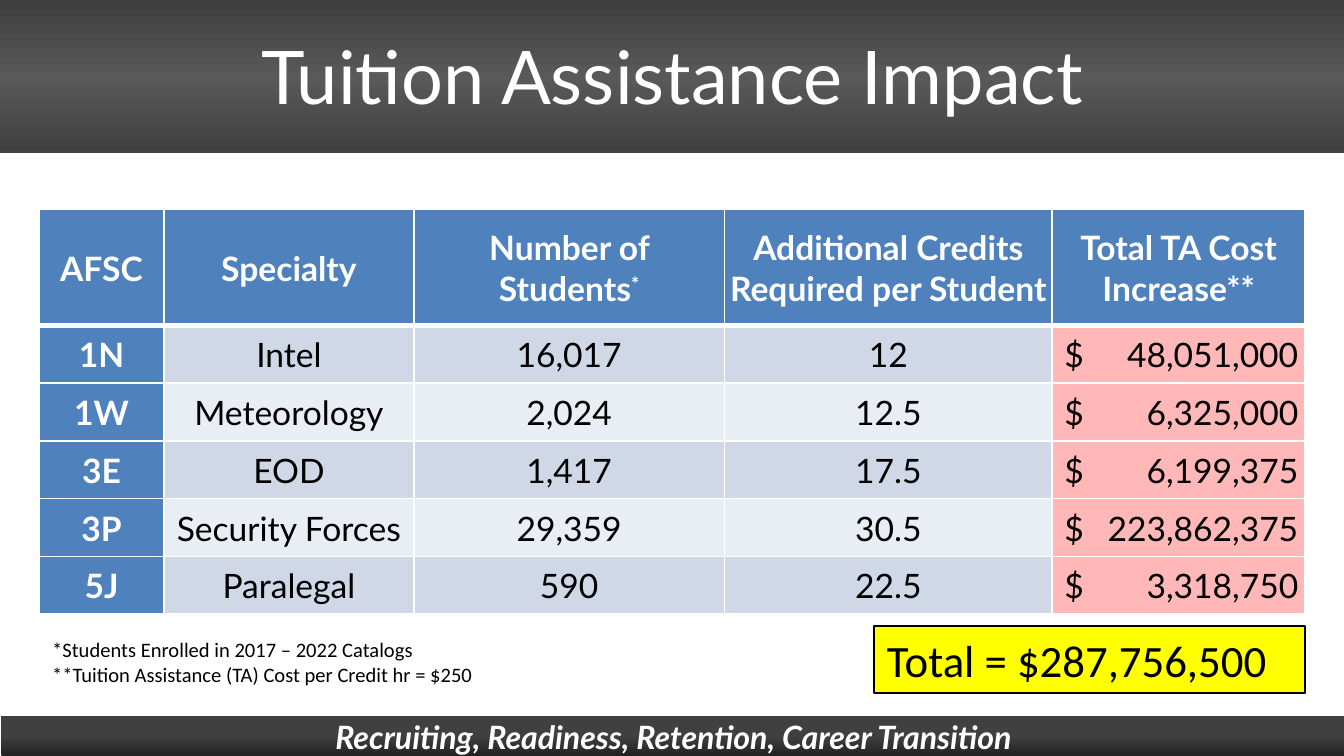
import pptx
import pptx.util
import pptx.dml.color
import pptx.enum.shapes
import pptx.enum.text
import pptx.oxml
import pptx.oxml.ns
import lxml.etree

Inches, Pt = pptx.util.Inches, pptx.util.Pt
ALIGN = pptx.enum.text.PP_ALIGN
MIDDLE = pptx.enum.text.MSO_ANCHOR.MIDDLE
qn = pptx.oxml.ns.qn

TITLE = "Tuition Assistance Impact"
MOTTO = "Recruiting, Readiness, Retention, Career Transition"
HEADS = ["AFSC", "Specialty", "Number of Students",
         "Additional Credits Required per Student", "Total TA Cost Increase**"]
ROWS = [
    ("1N", "Intel", "16,017", "12", "48,051,000"),
    ("1W", "Meteorology", "2,024", "12.5", "6,325,000"),
    ("3E", "EOD", "1,417", "17.5", "6,199,375"),
    ("3P", "Security Forces", "29,359", "30.5", "223,862,375"),
    ("5J", "Paralegal", "590", "22.5", "3,318,750"),
]
NOTES = ["*Students Enrolled in 2017 – 2022 Catalogs",
         "**Tuition Assistance (TA) Cost per Credit hr = $250"]
TOTAL = "Total = $287,756,500"

COLORS = {"white": "FFFFFF", "black": "000000", "head": "4F81BD",
          "odd": "D0D8E8", "even": "E9EDF4", "cost": "FFB7B7", "total": "FFFF00"}
TOP = [(0, "404040"), (50, "595959"), (97, "404040")]
BOTTOM = [(0, "212121"), (52, "404040"), (92, "3D3D3D")]
WIDTHS = [0.93, 1.86, 2.31, 2.44, 1.88]
HEAD_H, ROW_H = 0.86, 0.43


def color(name):
    return pptx.dml.color.RGBColor.from_string(COLORS[name])


def style(para, size, face, name, align=ALIGN.LEFT, bold=False, italic=False):
    para.alignment = align
    font = para.font
    font.size, font.name, font.bold, font.italic = Pt(size), face, bold, italic
    font.color.rgb = color(name)


def add_rect(slide, box):
    rect = slide.shapes.add_shape(pptx.enum.shapes.MSO_SHAPE.RECTANGLE, *map(Inches, box))
    rect.shadow.inherit = False
    return rect


def add_band(slide, box, stops):
    """Add a borderless bar with an upright gradient of (percent, hex) stops."""
    band = add_rect(slide, box)
    band.line.fill.background()
    band.fill.gradient()
    band.fill.gradient_angle = 90
    group = band._element.spPr.find(qn("a:gradFill")).find(qn("a:gsLst"))
    for old in list(group):
        group.remove(old)
    for place, tone in stops:
        stop = lxml.etree.SubElement(group, qn("a:gs"), pos=str(place * 1000))
        lxml.etree.SubElement(stop, qn("a:srgbClr"), val=tone)
    return band


def set_edges(cell, widths):
    """Draw white edges; widths are points for left, right, top, bottom."""
    props = cell._tc.get_or_add_tcPr()
    for spot, (side, width) in enumerate(zip("LRTB", widths)):
        edge = pptx.oxml.parse_xml(
            f'<a:ln{side} {pptx.oxml.ns.nsdecls("a")} w="{Pt(width)}"><a:solidFill>'
            f'<a:srgbClr val="{COLORS["white"]}"/></a:solidFill></a:ln{side}>')
        props.insert(spot, edge)


def add_tab(para, place):
    tabs = lxml.etree.SubElement(para._p.get_or_add_pPr(), qn("a:tabLst"))
    lxml.etree.SubElement(tabs, qn("a:tab"), pos=str(Inches(place)), algn="r")


def fill_cell(cell, text, row, col):
    head, cost = row == 0, row > 0 and col == 4
    label = head or col == 0
    tone = "head" if label else "cost" if cost else "odd" if row % 2 else "even"
    cell.fill.solid()
    cell.fill.fore_color.rgb = color(tone)
    set_edges(cell, (1, 1, 3 if row == 1 else 1, 3 if head else 1))
    cell.vertical_anchor = MIDDLE
    cell.margin_left = Inches(0.09 if cost else 0.02)
    cell.margin_right = Inches(0.02)
    cell.margin_top = Inches(0.01)
    cell.margin_bottom = 0
    para = cell.text_frame.paragraphs[0]
    para.text = "$\t" + text if cost else text
    if cost:
        add_tab(para, 1.74)
    style(para, 18, "Lato", "white" if label else "black",
          ALIGN.LEFT if cost else ALIGN.CENTER, bold=label)
    if head and col == 2:
        star = para.add_run()
        star.text = "*"
        star.font._element.set("baseline", "30000")


def add_costs(slide):
    height = HEAD_H + ROW_H * len(ROWS)
    frame = slide.shapes.add_table(len(ROWS) + 1, len(HEADS), Inches(0.29), Inches(1.56),
                                   Inches(sum(WIDTHS)), Inches(height))
    table = frame.table
    for col, width in enumerate(WIDTHS):
        table.columns[col].width = Inches(width)
    for row, texts in enumerate([HEADS, *ROWS]):
        table.rows[row].height = Inches(ROW_H if row else HEAD_H)
        for col, text in enumerate(texts):
            fill_cell(table.cell(row, col), text, row, col)


def main():
    deck = pptx.Presentation()
    deck.slide_width, deck.slide_height = Inches(10), Inches(10 * 9 / 16)
    slide = deck.slides.add_slide(deck.slide_layouts[6])

    add_band(slide, (0, 0, 10, 1.14), TOP)
    foot = add_band(slide, (0.01, 5.33, 10, 0.3), BOTTOM).text_frame
    foot.margin_left = foot.margin_right = Inches(0.07)
    foot.margin_top = foot.margin_bottom = Inches(0.04)
    foot.vertical_anchor = MIDDLE
    foot.text = MOTTO
    style(foot.paragraphs[0], 17.2, "Lato", "white", ALIGN.CENTER, True, True)

    add_costs(slide)

    title = slide.shapes.add_textbox(*map(Inches, (1.67, 0.17, 6.66, 0.77))).text_frame
    title.word_wrap = True
    title.vertical_anchor = MIDDLE
    title.text = TITLE
    style(title.paragraphs[0], 39.6, "Lato", "white", ALIGN.CENTER)

    notes = slide.shapes.add_textbox(*map(Inches, (0.29, 4.69, 3.43, 0.47))).text_frame
    notes.word_wrap = True
    notes.text = "\n".join(NOTES)
    for para in notes.paragraphs:
        style(para, 11, "Calibri", "black")

    total = add_rect(slide, (6.5, 4.66, 3.21, 0.5))
    total.fill.solid()
    total.fill.fore_color.rgb = color("total")
    total.line.color.rgb = color("black")
    total.line.width = Pt(1)
    total.text_frame.vertical_anchor = pptx.enum.text.MSO_ANCHOR.TOP
    total.text_frame.text = TOTAL
    style(total.text_frame.paragraphs[0], 24, "Calibri", "black")

    deck.save("out.pptx")


if __name__ == "__main__":
    main()
